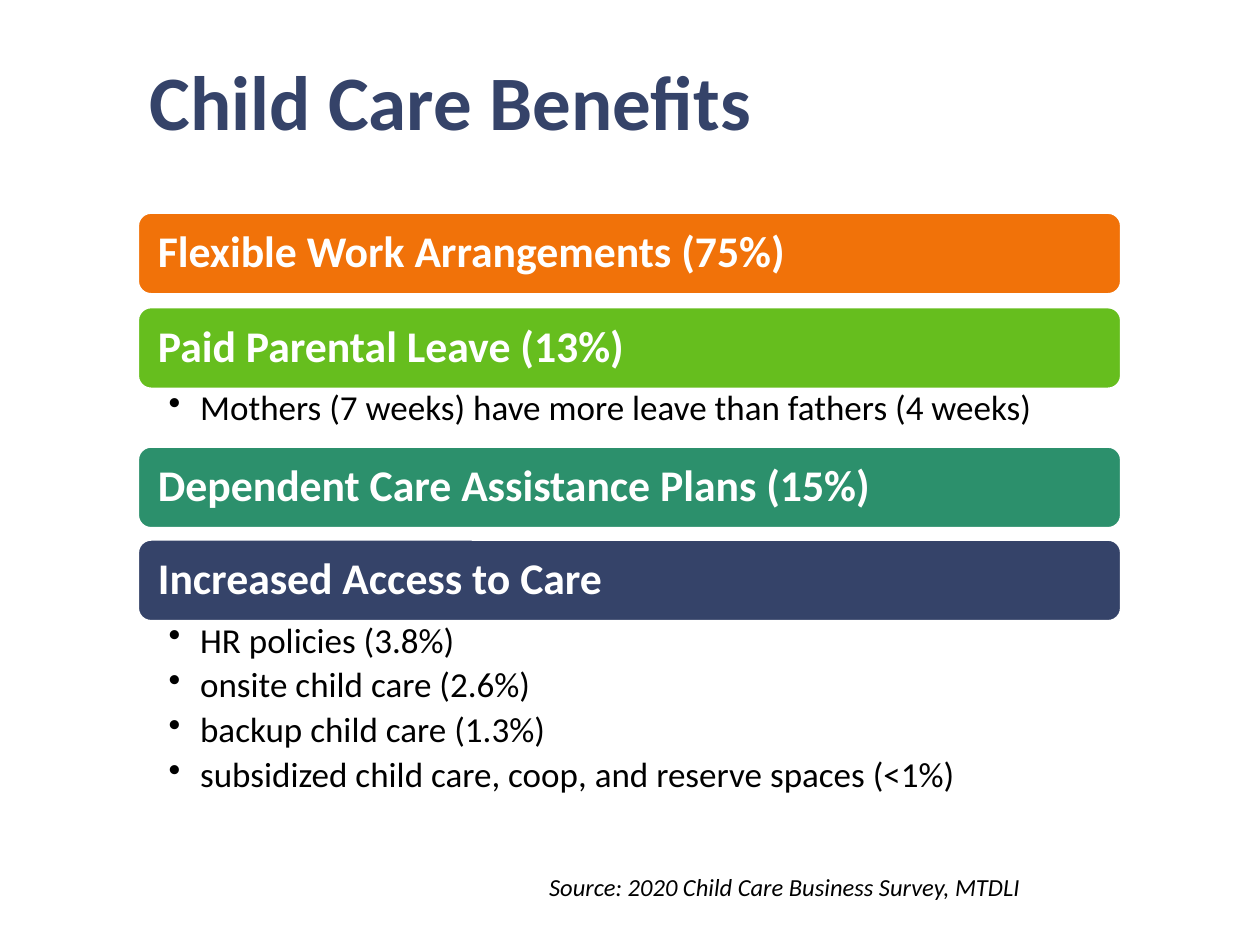
from dataclasses import dataclass

from lxml.etree import SubElement
from pptx import Presentation
from pptx.dml.color import RGBColor
from pptx.enum.shapes import MSO_SHAPE
from pptx.enum.text import MSO_ANCHOR, PP_ALIGN
from pptx.oxml.ns import qn
from pptx.util import Pt


@dataclass(frozen=True)
class Theme:
    font: str = "Calibri"
    navy: str = "354369"
    orange: str = "F17209"
    green: str = "66BE1E"
    teal: str = "2C906C"
    white: str = "FFFFFF"
    black: str = "000000"
    title_size: float = 44
    bar_size: float = 25
    list_size: float = 20
    source_size: float = 14


THEME = Theme()
LEFT, WIDTH = 78.5, 562.5
BAR_HEIGHT = 47.25

# Each benefit: bar top, colour, heading, details
BENEFITS = [
    (121.2, THEME.orange, "Flexible Work Arrangements (75%)", []),
    (175.2, THEME.green, "Paid Parental Leave (13%)",
     ["Mothers (7 weeks) have more leave than fathers (4 weeks)"]),
    (254.9, THEME.teal, "Dependent Care Assistance Plans (15%)", []),
    (308, THEME.navy, "Increased Access to Care",
     ["HR policies (3.8%)", "onsite child care (2.6%)", "backup child care (1.3%)",
      "subsidized child care, coop, and reserve spaces (<1%)"]),
]


def set_frame(frame, anchor, left, top, right, bottom):
    frame.word_wrap = True
    frame.vertical_anchor = anchor
    frame.margin_left, frame.margin_top = Pt(left), Pt(top)
    frame.margin_right, frame.margin_bottom = Pt(right), Pt(bottom)


def add_run(para, text, size, color, bold=False, italic=False):
    span = para.add_run()
    span.text = text
    span.font.name = THEME.font
    span.font.size = Pt(size)
    span.font.bold = bold
    span.font.italic = italic
    span.font.color.rgb = RGBColor.from_string(color)


def add_label(page, left, top, width, height, text, size, color, **style):
    """A single line of text in a plain box."""
    box = page.shapes.add_textbox(Pt(left), Pt(top), Pt(width), Pt(height))
    set_frame(box.text_frame, MSO_ANCHOR.MIDDLE, 7.2, 3.6, 7.2, 3.6)
    add_run(box.text_frame.paragraphs[0], text, size, color, **style)


def add_bar(page, left, top, width, height, color, heading):
    """A rounded bar that carries its heading."""
    bar = page.shapes.add_shape(
        MSO_SHAPE.ROUNDED_RECTANGLE, Pt(left), Pt(top), Pt(width), Pt(height))
    bar.shadow.inherit = False
    bar.fill.solid()
    bar.fill.fore_color.rgb = RGBColor.from_string(color)
    bar.line.color.rgb = RGBColor.from_string(THEME.white)
    bar.line.width = Pt(2)
    set_frame(bar.text_frame, MSO_ANCHOR.MIDDLE, 9.5, 7.2, 9.5, 7.2)
    para = bar.text_frame.paragraphs[0]
    para.alignment = PP_ALIGN.LEFT
    para.line_spacing = 0.9
    add_run(para, heading, THEME.bar_size, THEME.white, bold=True)


def add_details(page, left, top, width, details):
    """A bulleted list below a bar."""
    line_pitch = 26
    box = page.shapes.add_textbox(
        Pt(left), Pt(top), Pt(width), Pt(line_pitch * len(details) + 5))
    frame = box.text_frame
    set_frame(frame, MSO_ANCHOR.TOP, 17.9, 1.8, 13.7, 1.8)
    for index, detail in enumerate(details):
        para = frame.add_paragraph() if index else frame.paragraphs[0]
        properties = para._p.get_or_add_pPr()
        properties.set("marL", str(Pt(18)))
        properties.set("indent", str(Pt(-18)))
        SubElement(properties, qn("a:buChar")).set("char", "•")
        para.line_spacing = 0.9
        para.space_after = Pt(4)
        add_run(para, detail, THEME.list_size, THEME.black)


def add_benefits(page, left, width):
    for top, color, heading, details in BENEFITS:
        add_bar(page, left, top, width, BAR_HEIGHT, color, heading)
        if details:
            add_details(page, left, top + BAR_HEIGHT - 1.2, width, details)


def main():
    deck = Presentation()
    deck.slide_width, deck.slide_height = Pt(720), Pt(540)
    page = deck.slides.add_slide(deck.slide_layouts[6])

    # Title
    add_label(page, LEFT, 30.2, 452, 54, "Child Care Benefits",
              THEME.title_size, THEME.navy, bold=True)
    # Benefit bars with their details
    add_benefits(page, LEFT, WIDTH)
    # Source line
    add_label(page, 306.7, 494.6, 317, 24.5,
              "Source: 2020 Child Care Business Survey, MTDLI",
              THEME.source_size, THEME.black, italic=True)

    deck.save("out.pptx")


if __name__ == "__main__":
    main()
